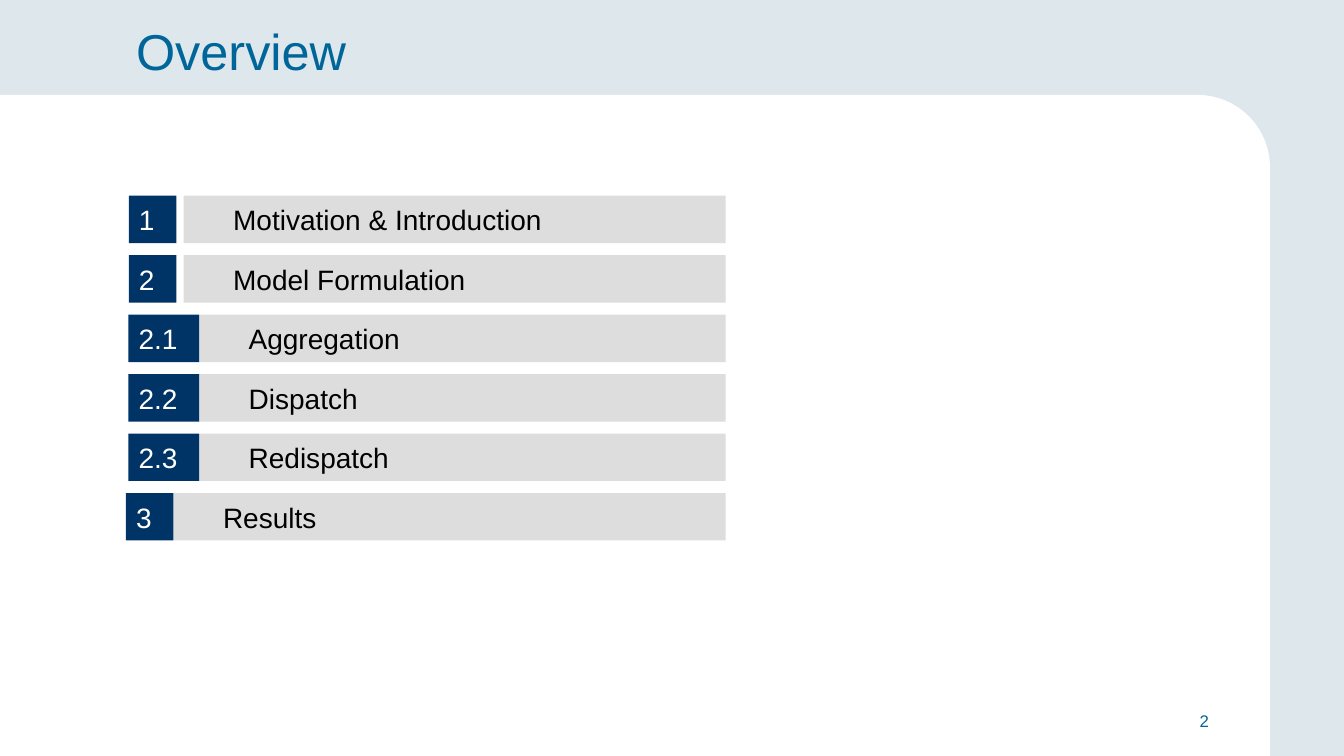
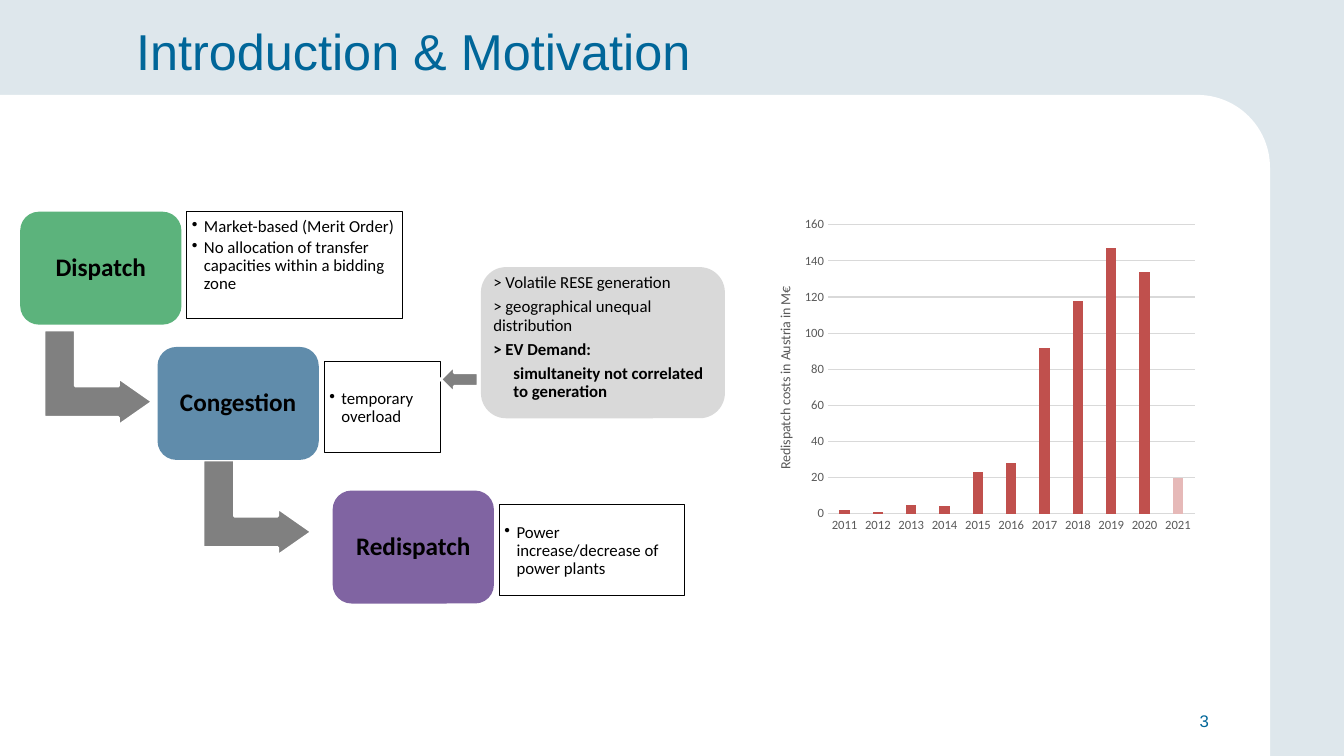
from lxml import etree
from pptx import Presentation
from pptx.chart.data import CategoryChartData
from pptx.dml.color import RGBColor
from pptx.enum.chart import XL_CHART_TYPE, XL_TICK_MARK
from pptx.enum.shapes import MSO_SHAPE
from pptx.enum.text import MSO_ANCHOR, PP_ALIGN
from pptx.oxml.ns import qn
from pptx.util import Inches, Pt

RECTANGLE = MSO_SHAPE.RECTANGLE
ROUNDED = MSO_SHAPE.ROUNDED_RECTANGLE
CORNER_PANEL = MSO_SHAPE.ROUND_1_RECTANGLE
BENT_ARROW = MSO_SHAPE.BENT_UP_ARROW
LEFT_ARROW = MSO_SHAPE.LEFT_ARROW
COLUMN_CHART = XL_CHART_TYPE.COLUMN_CLUSTERED
NO_TICKS = XL_TICK_MARK.NONE
TOP, MIDDLE = MSO_ANCHOR.TOP, MSO_ANCHOR.MIDDLE
LEFT, CENTER, RIGHT = PP_ALIGN.LEFT, PP_ALIGN.CENTER, PP_ALIGN.RIGHT

COLUMNS, ROWS = 160, 90
TITLE_FONT, DIAGRAM_FONT = "Arial", "Calibri"
COLORS = {
    "background": "DEE7EC",
    "white": "FFFFFF",
    "black": "000000",
    "title": "006699",
    "number": "003366",
    "label": "DDDDDD",
    "arrow": "808080",
    "callout": "D9D9D9",
    "dispatch": "5CB37C",
    "congestion": "608CAB",
    "redispatch": "8064A2",
    "axis": "595959",
    "grid": "D9D9D9",
    "bar": "C0504D",
    "partial": "E6B9B8",
}

NUMBER_HEIGHT = 5.65
AGENDA_TOP, AGENDA_PITCH, AGENDA_RIGHT = 23.3, 7.08, 86.4
AGENDA = [
    ("1", "Motivation & Introduction", 15.35, 5.65, 0.85),
    ("2", "Model Formulation", 15.35, 5.65, 0.85),
    ("2.1", "Aggregation", 15.3, 8.4, 0),
    ("2.2", "Dispatch", 15.3, 8.4, 0),
    ("2.3", "Redispatch", 15.3, 8.4, 0),
    ("3", "Results", 15, 5.65, 0),
]

NODE_WIDTH, NODE_HEIGHT, NOTE_OFFSET = 19.2, 13.45, 19.85
STEPS = [
    ("Dispatch", 2.4, 25.2, (0, 25.7, 12.75), TOP,
     ["Market-based (Merit Order)",
      "No allocation of transfer capacities within a bidding zone"]),
    ("Congestion", 18.75, 41.3, (1.75, 13.9, 10.85), MIDDLE, ["temporary overload"]),
    ("Redispatch", 39.6, 58.4, (1.7, 22.1, 10.85), MIDDLE,
     ["Power increase/decrease of power plants"]),
]
BENT_ARROWS = [(6, 38.5), (24.95, 54)]
CAUSES = ["> Volatile RESE generation", "> geographical unequal distribution"]
REDISPATCH_COSTS = {
    "2011": 2, "2012": 1, "2013": 5, "2014": 4, "2015": 23, "2016": 28,
    "2017": 92, "2018": 118, "2019": 147, "2020": 134, "2021": 20,
}


def color(name):
    return RGBColor.from_string(COLORS[name])


def style_font(font, name, size, tint, bold=False):
    font.name = name
    font.size = Pt(size)
    font.bold = bold
    font.color.rgb = color(tint)


def write_text(frame, text, font=TITLE_FONT, size=12, tint="black", bold=False,
               align=LEFT, bullet=None, indent=0, line_spacing=None,
               space_after=0, append=False):
    lines = [text] if isinstance(text, str) else text
    for index, line in enumerate(lines):
        first = index == 0 and not append
        paragraph = frame.paragraphs[0] if first else frame.add_paragraph()
        if bullet or indent:
            properties = paragraph._p.get_or_add_pPr()
            properties.set("marL", str(Inches(indent)))
            properties.set("indent", str(Inches(-indent if bullet else 0)))
            if bullet:
                etree.SubElement(properties, qn("a:buChar")).set("char", bullet)
        paragraph.alignment = align
        paragraph.space_before = Pt(0)
        paragraph.space_after = Pt(space_after)
        if line_spacing:
            paragraph.line_spacing = line_spacing
        run = paragraph.add_run()
        run.text = line
        style_font(run.font, font, size, tint, bold)


def place_in_chart(parent, index, **shares):
    existing = parent.find(qn("c:layout"))
    if existing is not None:
        parent.remove(existing)
    layout = etree.Element(qn("c:layout"))
    manual = etree.SubElement(layout, qn("c:manualLayout"))
    if "w" in shares:
        etree.SubElement(manual, qn("c:layoutTarget")).set("val", "inner")
    for axis in "xy":
        etree.SubElement(manual, qn(f"c:{axis}Mode")).set("val", "edge")
    for key, share in shares.items():
        etree.SubElement(manual, qn(f"c:{key}")).set("val", str(share))
    parent.insert(index, layout)


class Deck:
    def __init__(self):
        self.presentation = Presentation()
        self.presentation.slide_width = Inches(13.33)
        self.presentation.slide_height = Inches(7.5)
        fill = self.presentation.slide_master.background.fill
        fill.solid()
        fill.fore_color.rgb = color("background")
        self.slide = None

    def across(self, columns):
        return int(self.presentation.slide_width * columns / COLUMNS)

    def down(self, rows):
        return int(self.presentation.slide_height * rows / ROWS)

    def box(self, left, top, width, height):
        return self.across(left), self.down(top), self.across(width), self.down(height)

    def add_slide(self, title, number):
        self.slide = self.presentation.slides.add_slide(
            self.presentation.slide_layouts[5])
        self.add_shape(CORNER_PANEL, 0, 11.3, 151.2, 78.7, fill="white",
                       adjustments=[0.11])
        heading = self.slide.shapes.title
        heading.left, heading.top, heading.width, heading.height = self.box(
            15, 1.7, 130, 8.5)
        heading.text_frame.vertical_anchor = MIDDLE
        write_text(heading.text_frame, title, size=36, tint="title")
        self.add_text(str(number), 114.7, 83.4, 30.4, 4.8, align=RIGHT, tint="title")

    def format_frame(self, frame, margins=None, anchor=MIDDLE):
        frame.word_wrap = True
        frame.vertical_anchor = anchor
        if margins:
            left, top, right, bottom = margins
            frame.margin_left, frame.margin_right = self.across(left), self.across(right)
            frame.margin_top, frame.margin_bottom = self.down(top), self.down(bottom)

    def add_text(self, text, left, top, width, height, **style):
        textbox = self.slide.shapes.add_textbox(*self.box(left, top, width, height))
        self.format_frame(textbox.text_frame)
        write_text(textbox.text_frame, text, **style)

    def add_shape(self, kind, left, top, width, height, fill=None, line=None,
                  line_width=0.75, adjustments=(), rotation=0, text=None,
                  margins=None, anchor=MIDDLE, **style):
        shape = self.slide.shapes.add_shape(kind, *self.box(left, top, width, height))
        shape.shadow.inherit = False
        shape.rotation = rotation
        for index, share in enumerate(adjustments):
            shape.adjustments[index] = share
        if fill:
            shape.fill.solid()
            shape.fill.fore_color.rgb = color(fill)
        else:
            shape.fill.background()
        if line:
            shape.line.color.rgb = color(line)
            shape.line.width = Pt(line_width)
        else:
            shape.line.fill.background()
        if text:
            self.format_frame(shape.text_frame, margins, anchor)
            write_text(shape.text_frame, text, **style)
        return shape

    def add_arrow(self, kind, left, top, width, height, **style):
        self.add_shape(kind, left, top, width, height, fill="arrow", line="white",
                       line_width=2, **style)

    def add_agenda_row(self, top, number, label, left, width, gap):
        label_left = left + width + gap
        self.add_shape(RECTANGLE, label_left, top, AGENDA_RIGHT - label_left,
                       NUMBER_HEIGHT, fill="label", text=label, size=20,
                       margins=(5.9, 0.6, 1.2, 0.6))
        self.add_shape(RECTANGLE, left, top, width, NUMBER_HEIGHT, fill="number",
                       text=number, size=20, tint="white",
                       margins=(1.2, 0.6, 0, 0.6))

    def add_step(self, label, left, top, note, anchor, points):
        note_drop, note_width, note_height = note
        self.add_shape(ROUNDED, left, top, NODE_WIDTH, NODE_HEIGHT,
                       fill=label.lower(), adjustments=[0.167], text=label,
                       font=DIAGRAM_FONT, size=18, bold=True, align=CENTER,
                       margins=(0.5, 0.5, 0.5, 0.5), line_spacing=0.9)
        self.add_shape(RECTANGLE, left + NOTE_OFFSET, top + note_drop, note_width,
                       note_height, line="black", text=points, font=DIAGRAM_FONT,
                       bullet="•", indent=0.12, margins=(0.6, 0.8, 0.6, 0.6),
                       anchor=anchor, line_spacing=0.9, space_after=1.8)

    def add_column_chart(self, values, axis_title, left, top, width, height):
        data = CategoryChartData()
        data.categories = list(values)
        data.add_series("Series 1", list(values.values()))
        chart = self.slide.shapes.add_chart(
            COLUMN_CHART, *self.box(left, top, width, height), data).chart
        chart.has_title = False
        chart.has_legend = False
        style_font(chart.font, DIAGRAM_FONT, 10, "black")

        plot = chart.plots[0]
        plot.gap_width, plot.overlap, plot.vary_by_categories = 219, -27, False
        series = plot.series[0]
        last_point = series.points[len(values) - 1]
        for target, tint in ((series, "bar"), (last_point, "partial")):
            target.format.fill.solid()
            target.format.fill.fore_color.rgb = color(tint)

        category_axis, value_axis = chart.category_axis, chart.value_axis
        for axis in (category_axis, value_axis):
            axis.major_tick_mark = axis.minor_tick_mark = NO_TICKS
            style_font(axis.tick_labels.font, DIAGRAM_FONT, 9, "axis")
        value_axis.minimum_scale, value_axis.maximum_scale = 0, 160
        value_axis.major_unit = 20
        value_axis.format.line.fill.background()
        for line in (category_axis.format.line, value_axis.major_gridlines.format.line):
            line.color.rgb = color("grid")
            line.width = Pt(0.75)

        title_frame = value_axis.axis_title.text_frame
        write_text(title_frame, axis_title, font=DIAGRAM_FONT, size=10, tint="axis",
                   align=CENTER)
        plot_area = chart.element.find(".//" + qn("c:plotArea"))
        title = plot_area.find(".//" + qn("c:title"))
        body = title.find(".//" + qn("a:bodyPr"))
        body.set("rot", "-5400000")
        body.set("vert", "horz")
        place_in_chart(plot_area, 0, x=0.17, y=0.04, w=0.81, h=0.88)
        place_in_chart(title, 1, x=0.05, y=0.22)


def build_overview(deck):
    deck.add_slide("Overview", 2)
    for index, row in enumerate(AGENDA):
        deck.add_agenda_row(AGENDA_TOP + index * AGENDA_PITCH, *row)


def build_motivation(deck):
    deck.add_slide("Introduction & Motivation", 3)
    for left, top in BENT_ARROWS:
        deck.add_arrow(BENT_ARROW, left, top, 11.4, 12.95, rotation=90,
                       adjustments=[0.328, 0.25, 0.358])
    for step in STEPS:
        deck.add_step(*step)
    deck.add_arrow(LEFT_ARROW, 52.45, 43.55, 4.45, 3.25)
    style = {"font": DIAGRAM_FONT, "line_spacing": 0.9, "space_after": 4.2}
    callout = deck.add_shape(ROUNDED, 57.25, 31.8, 29.05, 18, fill="callout",
                             adjustments=[0.167], text=CAUSES, anchor=TOP,
                             margins=(0.6, 0, 0.6, 0), **style)
    write_text(callout.text_frame, "> EV Demand:", bold=True, append=True, **style)
    write_text(callout.text_frame, "simultaneity not correlated to generation",
               bold=True, indent=0.2, append=True, **style)
    deck.add_column_chart(REDISPATCH_COSTS, "Redispatch costs in Austria in M€",
                          89.4, 25.2, 53.9, 39.1)


def main():
    deck = Deck()
    build_overview(deck)
    build_motivation(deck)
    deck.presentation.save("out.pptx")


if __name__ == "__main__":
    main()
